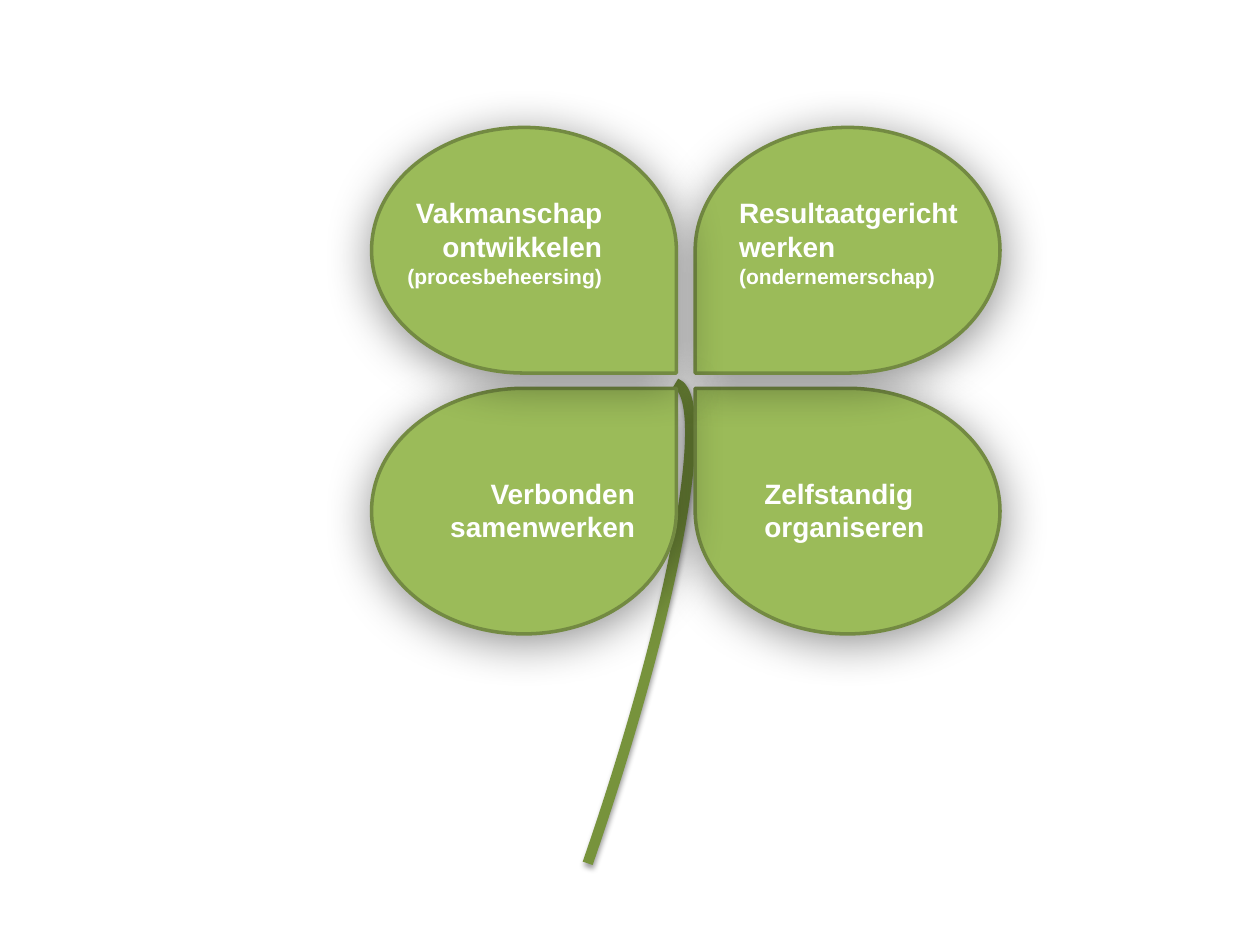
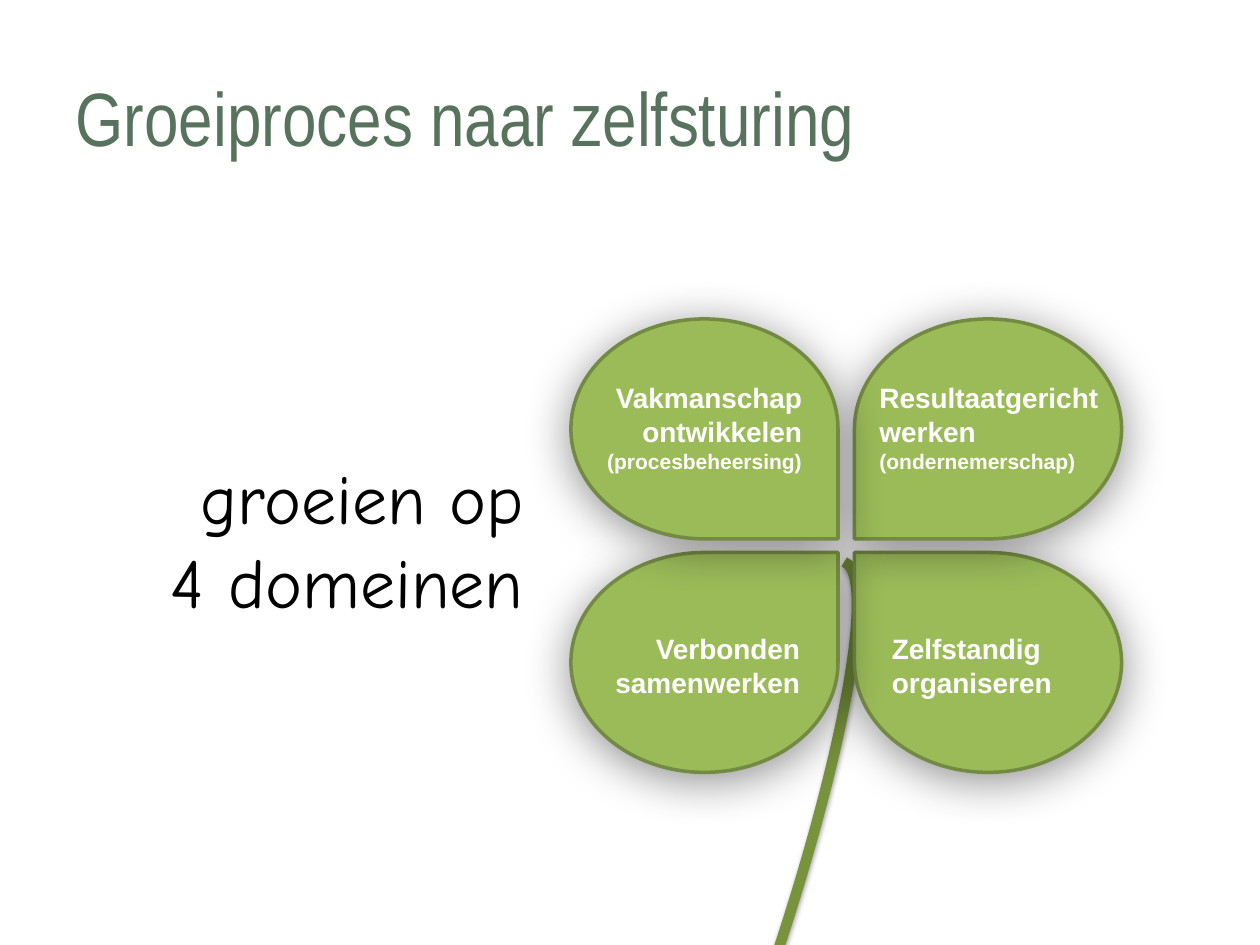
from lxml import etree
from pptx import Presentation
from pptx.dml.color import RGBColor
from pptx.enum.shapes import MSO_SHAPE
from pptx.enum.text import MSO_ANCHOR, MSO_AUTO_SIZE, PP_ALIGN
from pptx.oxml.ns import qn
from pptx.util import Cm, Pt

TEARDROP, ARC = MSO_SHAPE.TEAR, MSO_SHAPE.ARC
LEFT, RIGHT = PP_ALIGN.LEFT, PP_ALIGN.RIGHT
MIDDLE = MSO_ANCHOR.MIDDLE
NO_FIT, GROW = MSO_AUTO_SIZE.NONE, MSO_AUTO_SIZE.SHAPE_TO_FIT_TEXT

LEAF, LEAF_EDGE, STEM = "9BBB59", "738A42", "77933C"
TITLE, WHITE, BLACK = "58735D", "FFFFFF", "000000"

LEAF_SHARE = 0.485
LABEL_TOPS = (0.123, 0.676)
DOMAINS = [
    ("craft", 0, LEFT_COLUMN := 0, [("Vakmanschap ontwikkelen", 16), ("(procesbeheersing)", 12)]),
    ("results", 0, RIGHT_COLUMN := 1, [("Resultaatgericht werken", 16), ("(ondernemerschap)", 12)]),
    ("together", 1, LEFT_COLUMN, [("Verbonden samenwerken", 16)]),
    ("independent", 1, RIGHT_COLUMN, [("Zelfstandig", 16), ("organiseren", 16)]),
]


def color(hex_value):
    return RGBColor.from_string(hex_value)


def set_font(paragraph, name, size, hex_value, bold=False):
    paragraph.font.name = name
    paragraph.font.size = Pt(size)
    paragraph.font.bold = bold
    paragraph.font.color.rgb = color(hex_value)


def set_line(shape, hex_value, width):
    shape.line.color.rgb = color(hex_value)
    shape.line.width = Pt(width)


def add_shadow(shape, alpha, blur, distance):
    shape.shadow.inherit = False
    effects = shape.element.spPr.find(qn("a:effectLst"))
    shadow = etree.SubElement(
        effects, qn("a:outerShdw"), blurRad=str(Pt(blur)), dist=str(Pt(distance)),
        dir="5400000", algn="ctr", rotWithShape="0")
    shade = etree.SubElement(shadow, qn("a:srgbClr"), val=BLACK)
    etree.SubElement(shade, qn("a:alpha"), val=str(alpha * 1000))


def add_text(shapes, left, top, width, height, lines, align, font, hex_value, bold=False):
    box = shapes.add_textbox(Cm(left), Cm(top), Cm(width), Cm(height))
    frame = box.text_frame
    frame.word_wrap = True
    frame.auto_size = GROW
    for index, (text, size) in enumerate(lines):
        paragraph = frame.add_paragraph() if index else frame.paragraphs[0]
        paragraph.text = text
        paragraph.alignment = align
        set_font(paragraph, font, size, hex_value, bold)


def add_stem(shapes, left, top, width, height):
    stem = shapes.add_shape(ARC, Cm(left), Cm(top), Cm(width), Cm(height))
    stem.rotation = 19.1
    stem.fill.background()
    set_line(stem, STEM, 6)
    add_shadow(stem, 38, 3.1, 1.6)


def add_leaf(shapes, left, top, width, height, row, column):
    leaf = shapes.add_shape(TEARDROP, Cm(left), Cm(top), Cm(width), Cm(height))
    transform = leaf.element.spPr.find(qn("a:xfrm"))
    if column == RIGHT_COLUMN:
        transform.set("flipH", "1")
    if row == 0:
        transform.set("flipV", "1")
    leaf.fill.solid()
    leaf.fill.fore_color.rgb = color(LEAF)
    set_line(leaf, LEAF_EDGE, 2)
    add_shadow(leaf, 43, 27, 4)


def add_clover(shapes, left, top, width, height, stem_offset, label_spans):
    stem_left, stem_top = stem_offset
    add_stem(shapes, left + stem_left, top + stem_top, 0.236 * width, 1.905 * height)
    leaf_width, leaf_height = LEAF_SHARE * width, LEAF_SHARE * height
    for column in (RIGHT_COLUMN, LEFT_COLUMN):
        for row in (1, 0):
            add_leaf(shapes, left + column * (width - leaf_width),
                     top + row * (height - leaf_height),
                     leaf_width, leaf_height, row, column)
    for domain, row, column, lines in DOMAINS:
        label_left, label_width = label_spans[domain]
        add_text(shapes, left + label_left, top + LABEL_TOPS[row] * height,
                 label_width, 2.13 if row == 0 else 1.63, lines,
                 LEFT if column == RIGHT_COLUMN else RIGHT, "Arial", WHITE, True)


def add_title(slide, text, left, top, width, height):
    title = slide.shapes.title
    title.left, title.top, title.width, title.height = Cm(left), Cm(top), Cm(width), Cm(height)
    frame = title.text_frame
    frame.text = text
    frame.auto_size = NO_FIT
    frame.vertical_anchor = MIDDLE
    paragraph = frame.paragraphs[0]
    paragraph.alignment = LEFT
    set_font(paragraph, "Arial Narrow", 43.2, TITLE)


def build_clover_slide(presentation):
    slide = presentation.slides.add_slide(presentation.slide_layouts.get_by_name("Blank"))
    add_clover(slide.shapes, 7.49, 2.57, 12.67, 10.21, (1.45, 4.62), {
        "craft": (-0.18, 5.08), "results": (7.16, 5.54),
        "together": (0.61, 4.95), "independent": (7.67, 5.28)})


def build_growth_slide(presentation):
    slide = presentation.slides.add_slide(presentation.slide_layouts.get_by_name("Title Only"))
    add_clover(slide.shapes.add_group_shape().shapes, 11.51, 6.43, 11.1, 9.14, (1.35, 4.42), {
        "craft": (0.46, 4.45), "results": (5.97, 5.13),
        "together": (0.53, 4.34), "independent": (6.22, 4.65)})
    add_title(slide, "Groeiproces naar zelfsturing", 1.27, 0.76, 20.9, 3.18)
    add_text(slide.shapes, 2.49, 9.04, 8.31, 3.68,
             [("groeien op", 40), ("4 domeinen", 40)], RIGHT, "Comic Neue", BLACK)


def main():
    presentation = Presentation()
    presentation.slide_width, presentation.slide_height = Cm(25.4), Cm(19.05)
    build_clover_slide(presentation)
    build_growth_slide(presentation)
    presentation.save("out.pptx")


if __name__ == "__main__":
    main()
